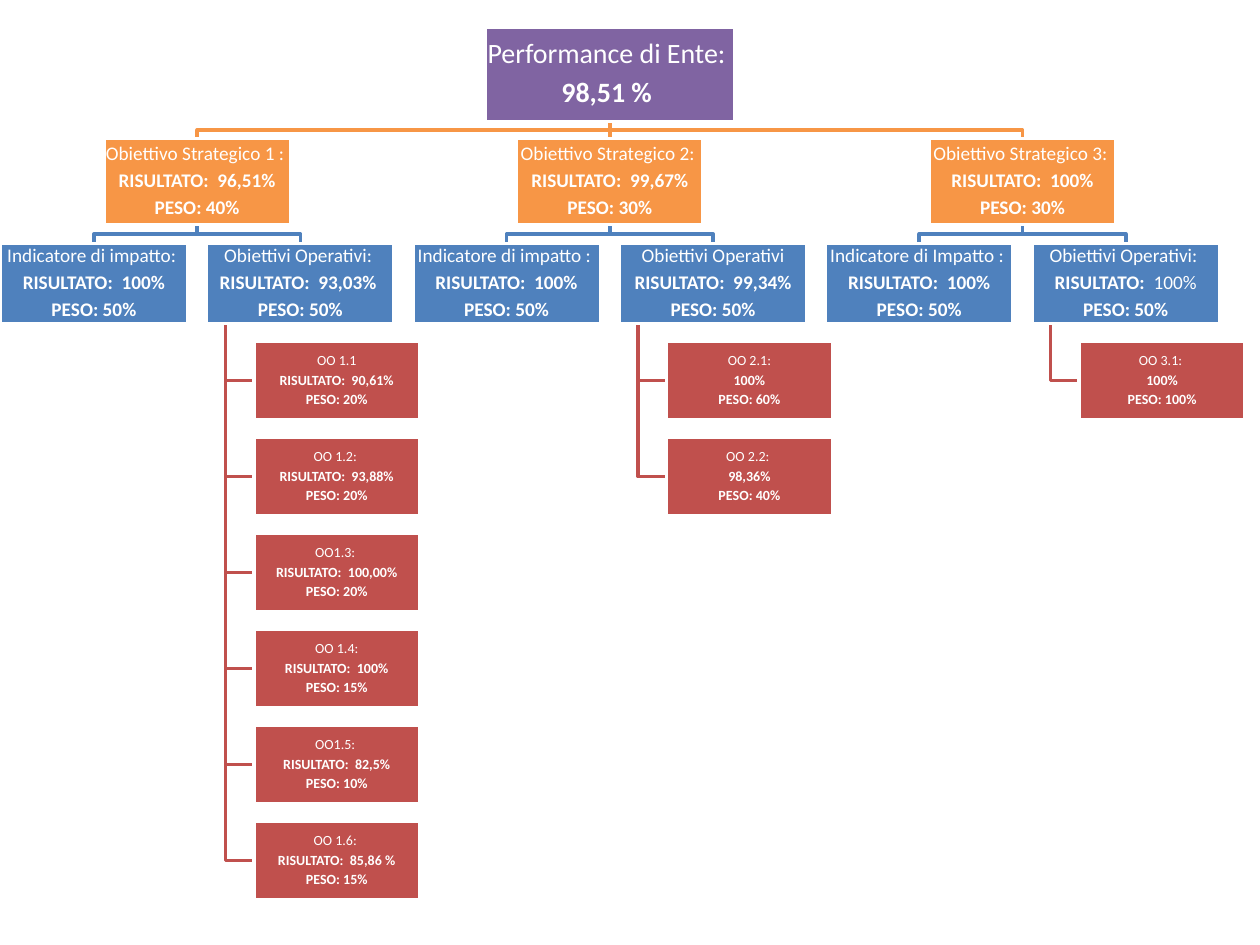
from collections import namedtuple

from lxml import etree
from pptx import Presentation
from pptx.dml.color import RGBColor
from pptx.enum.shapes import MSO_CONNECTOR, MSO_SHAPE
from pptx.enum.text import MSO_ANCHOR, MSO_AUTO_SIZE, PP_ALIGN
from pptx.oxml.ns import qn
from pptx.util import Pt

RECTANGLE = MSO_SHAPE.RECTANGLE
STRAIGHT = MSO_CONNECTOR.STRAIGHT
MIDDLE = MSO_ANCHOR.MIDDLE
CENTER = PP_ALIGN.CENTER
NO_AUTOFIT = MSO_AUTO_SIZE.NONE

WHITE = RGBColor(0xFF, 0xFF, 0xFF)
PURPLE = RGBColor(0x80, 0x64, 0xA2)
ORANGE = RGBColor(0xF7, 0x96, 0x46)
BLUE = RGBColor(0x4F, 0x81, 0xBD)
RED = RGBColor(0xC0, 0x50, 0x4D)

FONT = "Calibri"
LINE_WIDTH = 2
TITLE_ONLY = 5
TOP, BOTTOM = 0, 2

# All lengths below are in points
ROOT_CENTER, ROOT_TOP, ROOT_W, ROOT_H = 348.5, 15.4, 142.5, 54
BRANCH_TOP, BRANCH_PITCH = 79.2, 235.8
STRATEGIC_W, STRATEGIC_H = 106.6, 49
PAIR_TOP, PAIR_PITCH, PAIR_W, PAIR_H = 139, 118, 107.2, 46
LEAF_INDENT, LEAF_GAP, LEAF_W, LEAF_H, LEAF_PITCH = 27, 10.2, 94.8, 44.6, 54.86
TRUNK_INDENT = 10.7

Box = namedtuple("Box", "left top width height")
Branch = namedtuple("Branch", "strategic impact operative leaves")

ROOT_TEXT = ["Performance di Ente: ", "98,51 % "]

# The first line of a node is regular and the others bold;
# in a (bold, regular) pair the second part is regular too.
BRANCHES = [
    Branch(
        ["Obiettivo Strategico 1 : ", "RISULTATO:  96,51%", "PESO: 40%"],
        ["Indicatore di impatto: ", "RISULTATO:  100%", "PESO: 50%"],
        ["Obiettivi Operativi: ", "RISULTATO:  93,03% ", "PESO: 50%"],
        [
            ["OO 1.1", "RISULTATO:  90,61%", "PESO: 20%"],
            ["OO 1.2: ", "RISULTATO:  93,88%", "PESO: 20%"],
            ["OO1.3: ", "RISULTATO:  100,00%", "PESO: 20%"],
            ["OO 1.4:", "RISULTATO:  100%", "PESO: 15%"],
            ["OO1.5: ", "RISULTATO:  82,5%", "PESO: 10%"],
            ["OO 1.6: ", "RISULTATO:  85,86 %", "PESO: 15%"],
        ],
    ),
    Branch(
        ["Obiettivo Strategico 2: ", "RISULTATO:  99,67%", "PESO: 30%"],
        ["Indicatore di impatto : ", "RISULTATO:  100%", "PESO: 50%"],
        ["Obiettivi Operativi", "RISULTATO:  99,34%", "PESO: 50%"],
        [
            ["OO 2.1:", "100%", "PESO: 60%"],
            ["OO 2.2: ", "98,36%", "PESO: 40%"],
        ],
    ),
    Branch(
        ["Obiettivo Strategico 3: ", "RISULTATO:  100%", "PESO: 30%"],
        ["Indicatore di Impatto : ", "RISULTATO:  100%", "PESO: 50%"],
        ["Obiettivi Operativi: ", ("RISULTATO:  ", "100%"), "PESO: 50%"],
        [["OO 3.1: ", "100%", "PESO: 100%"]],
    ),
]


def centered_box(center, top, width, height):
    return Box(center - width / 2, top, width, height)


def center_of(box):
    return box.left + box.width / 2


def bottom_of(box):
    return box.top + box.height


def write_lines(shape, lines, *, size, color=WHITE):
    frame = shape.text_frame
    frame.word_wrap = True
    frame.auto_size = NO_AUTOFIT
    frame.vertical_anchor = MIDDLE
    frame.margin_left = frame.margin_right = Pt(0.7)
    frame.margin_top = frame.margin_bottom = Pt(0.7)
    for index, line in enumerate(lines):
        paragraph = frame.paragraphs[0] if index == 0 else frame.add_paragraph()
        paragraph.alignment = CENTER
        paragraph.line_spacing = 0.9
        paragraph.space_before = Pt(0)
        paragraph.space_after = Pt(0.33 * size)
        parts = line if isinstance(line, tuple) else (line,)
        for position, part in enumerate(parts):
            run = paragraph.add_run()
            run.text = part
            run.font.name = FONT
            run.font.size = Pt(size)
            run.font.bold = index > 0 and position == 0
            run.font.color.rgb = color


def style_node(node, lines, *, fill, size):
    node.fill.solid()
    node.fill.fore_color.rgb = fill
    node.line.color.rgb = WHITE
    node.line.width = Pt(LINE_WIDTH)
    write_lines(node, lines, size=size)


def add_node(slide, box, lines, *, fill, size):
    node = slide.shapes.add_shape(RECTANGLE, *map(Pt, box))
    node.shadow.inherit = False
    style_node(node, lines, fill=fill, size=size)
    return node


def style_link(slide, link, color):
    """Colour a link and put it behind the nodes."""
    link.line.color.rgb = color
    link.line.width = Pt(LINE_WIDTH)
    slide.shapes._spTree.insert(2, link._element)


def add_bent_link(slide, points, color):
    start, *rest = [(Pt(x), Pt(y)) for x, y in points]
    builder = slide.shapes.build_freeform(*start)
    builder.add_line_segments(rest, close=False)
    link = builder.convert_to_shape()
    link.shadow.inherit = False
    link.fill.background()
    style_link(slide, link, color)


def link_down(slide, parent, child, color):
    """Bend halfway between the parent's bottom and the child's top."""
    start, end = bottom_of(parent), child.top
    x1, x2, bend = center_of(parent), center_of(child), (start + end) / 2
    add_bent_link(slide, [(x1, start), (x1, bend), (x2, bend), (x2, end)], color)


def link_straight(slide, parent_node, child_node, color):
    link = slide.shapes.add_connector(STRAIGHT, 0, 0, 0, 0)
    link.begin_connect(parent_node, BOTTOM)
    link.end_connect(child_node, TOP)
    etree.SubElement(link._element.spPr, qn("a:effectLst"))
    style_link(slide, link, color)


def add_root(slide, box):
    root = slide.shapes.title
    root.left, root.top, root.width, root.height = map(Pt, box)
    style_node(root, ROOT_TEXT, fill=PURPLE, size=16)
    return root


def add_leaves(slide, parent, leaves):
    trunk = parent.left + TRUNK_INDENT
    for index, lines in enumerate(leaves):
        top = bottom_of(parent) + LEAF_GAP + index * LEAF_PITCH
        box = Box(parent.left + LEAF_INDENT, top, LEAF_W, LEAF_H)
        add_node(slide, box, lines, fill=RED, size=8)
        middle = top + LEAF_H / 2
        points = [(trunk, bottom_of(parent)), (trunk, middle), (box.left, middle)]
        add_bent_link(slide, points, RED)


def add_branch(slide, box, branch):
    strategic = add_node(slide, box, branch.strategic, fill=ORANGE, size=11)
    for side, lines in ((-0.5, branch.impact), (0.5, branch.operative)):
        center = center_of(box) + side * PAIR_PITCH
        child = centered_box(center, PAIR_TOP, PAIR_W, PAIR_H)
        add_node(slide, child, lines, fill=BLUE, size=11)
        link_down(slide, box, child, BLUE)
    add_leaves(slide, child, branch.leaves)
    return strategic


def main():
    presentation = Presentation()
    presentation.slide_width, presentation.slide_height = Pt(720), Pt(540)
    slide = presentation.slides.add_slide(presentation.slide_layouts[TITLE_ONLY])

    root_box = centered_box(ROOT_CENTER, ROOT_TOP, ROOT_W, ROOT_H)
    root = add_root(slide, root_box)
    for offset, branch in enumerate(BRANCHES, start=-1):
        center = ROOT_CENTER + offset * BRANCH_PITCH
        box = centered_box(center, BRANCH_TOP, STRATEGIC_W, STRATEGIC_H)
        strategic = add_branch(slide, box, branch)
        if offset == 0:
            link_straight(slide, root, strategic, ORANGE)
        else:
            link_down(slide, root_box, box, ORANGE)

    presentation.save("out.pptx")


if __name__ == "__main__":
    main()
